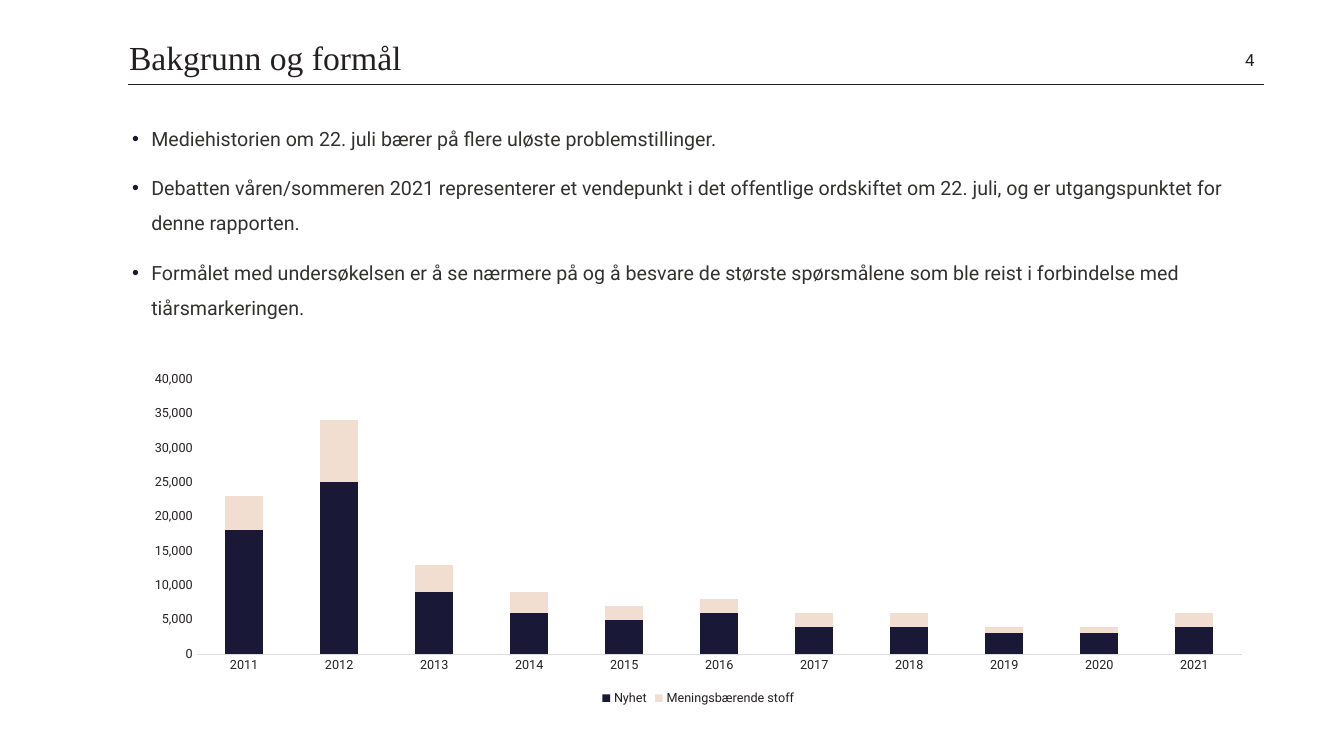
from lxml.etree import SubElement
from pptx import Presentation
from pptx.chart.data import CategoryChartData
from pptx.dml.color import RGBColor
from pptx.enum.chart import XL_CHART_TYPE, XL_LEGEND_POSITION, XL_TICK_MARK
from pptx.enum.shapes import MSO_CONNECTOR
from pptx.enum.text import MSO_ANCHOR, MSO_AUTO_SIZE, PP_ALIGN
from pptx.oxml.ns import qn
from pptx.util import Inches, Pt

INK = RGBColor(0x23, 0x1F, 0x20)
GREY = RGBColor(0x32, 0x31, 0x30)
NAVY = RGBColor(0x19, 0x18, 0x36)
SAND = RGBColor(0xF1, 0xDE, 0xD0)
AXIS = RGBColor(0xE0, 0xDC, 0xDD)

prs = Presentation()
prs.slide_width = Inches(13.33)
prs.slide_height = Inches(7.5)
s = prs.slides.add_slide(prs.slide_layouts[1])


def area(left, top, width, height):
    w, h = prs.slide_width / 100, prs.slide_height / 100
    return int(left * w), int(top * h), int(width * w), int(height * h)


def style(font, name, size, color):
    font.name = name
    font.size = Pt(size)
    font.color.rgb = color


title, body = s.shapes.title, s.placeholders[1]
for sp, place in ((title, (9.6, 5.07, 63.39, 5.6)), (body, (9.83, 15.2, 84.62, 28.53))):
    sp.left, sp.top, sp.width, sp.height = area(*place)
    tf = sp.text_frame
    tf.margin_left = tf.margin_right = tf.margin_top = tf.margin_bottom = 0
    tf.word_wrap = True
    tf.auto_size = MSO_AUTO_SIZE.NONE

title.text_frame.vertical_anchor = MSO_ANCHOR.MIDDLE
p = title.text_frame.paragraphs[0]
p.alignment = PP_ALIGN.LEFT
p.line_spacing = 0.9
r = p.add_run()
r.text = "Bakgrunn og formål"
style(r.font, "Times New Roman", 24, INK)

x, y, length, rise = area(9.53, 11.2, 84.54, 0)
rule = s.shapes.add_connector(MSO_CONNECTOR.STRAIGHT, x, y, x + length, y + rise)
rule.line.color.rgb = INK
rule.line.width = Pt(0.75)
SubElement(rule._element.spPr, qn("a:effectLst"))

number = s.shapes.add_textbox(*area(85.75, 5.07, 8.33, 5.6))
tf = number.text_frame
tf.word_wrap = True
tf.vertical_anchor = MSO_ANCHOR.MIDDLE
p = tf.paragraphs[0]
p.alignment = PP_ALIGN.RIGHT
r = p.add_run()
r.text = "4"
style(r.font, "Roboto", 12, INK)

points = [
    "Mediehistorien om 22. juli bærer på flere uløste problemstillinger.",
    "Debatten våren/sommeren 2021 representerer et vendepunkt i det offentlige "
    "ordskiftet om 22. juli, og er utgangspunktet for denne rapporten.",
    "Formålet med undersøkelsen er å se nærmere på og å besvare de største "
    "spørsmålene som ble reist i forbindelse med tiårsmarkeringen.",
]
tf = body.text_frame
for i, point in enumerate(points):
    p = tf.add_paragraph() if i else tf.paragraphs[0]
    pPr = p._p.get_or_add_pPr()
    pPr.set("marL", str(Inches(0.19)))
    pPr.set("indent", str(-Inches(0.19)))
    color = SubElement(SubElement(pPr, qn("a:buClr")), qn("a:srgbClr"))
    color.set("val", str(NAVY))
    SubElement(pPr, qn("a:buChar")).set("char", "•")
    p.line_spacing = 1.5
    p.space_before = Pt(10 if i else 0)
    r = p.add_run()
    r.text = point
    style(r.font, "Roboto", 14, GREY)

series = [
    ("Nyhet", NAVY, (18, 25, 9, 6, 5, 6, 4, 4, 3, 3, 4)),
    ("Meningsbærende stoff", SAND, (5, 9, 4, 3, 2, 2, 2, 2, 1, 1, 2)),
]
data = CategoryChartData(number_format="#,##0")
data.categories = [str(year) for year in range(2011, 2022)]
for name, color, thousands in series:
    data.add_series(name, [1000 * n for n in thousands])

chart = s.shapes.add_chart(
    XL_CHART_TYPE.COLUMN_STACKED, *area(9.83, 48.27, 84.25, 45.6), data
).chart
chart.has_title = False
style(chart.font, "Roboto", 10, INK)
chart.has_legend = True
chart.legend.position = XL_LEGEND_POSITION.BOTTOM
chart.legend.include_in_layout = False
style(chart.legend.font, "Roboto", 9, INK)

plot = chart.plots[0]
plot.vary_by_categories = False
plot.gap_width = 150
plot.overlap = 100
for bars, (name, color, thousands) in zip(plot.series, series):
    bars.format.fill.solid()
    bars.format.fill.fore_color.rgb = color

for axis in (chart.category_axis, chart.value_axis):
    axis.has_major_gridlines = False
    axis.major_tick_mark = axis.minor_tick_mark = XL_TICK_MARK.NONE
    style(axis.tick_labels.font, "Roboto", 9, INK)

chart.category_axis.format.line.color.rgb = AXIS
chart.category_axis.format.line.width = Pt(0.75)
values = chart.value_axis
values.format.line.fill.background()
values.minimum_scale = 0
values.maximum_scale = 40000
values.major_unit = 5000
values.tick_labels.number_format = "#,##0"
values.tick_labels.number_format_is_linked = False

prs.save("out.pptx")
